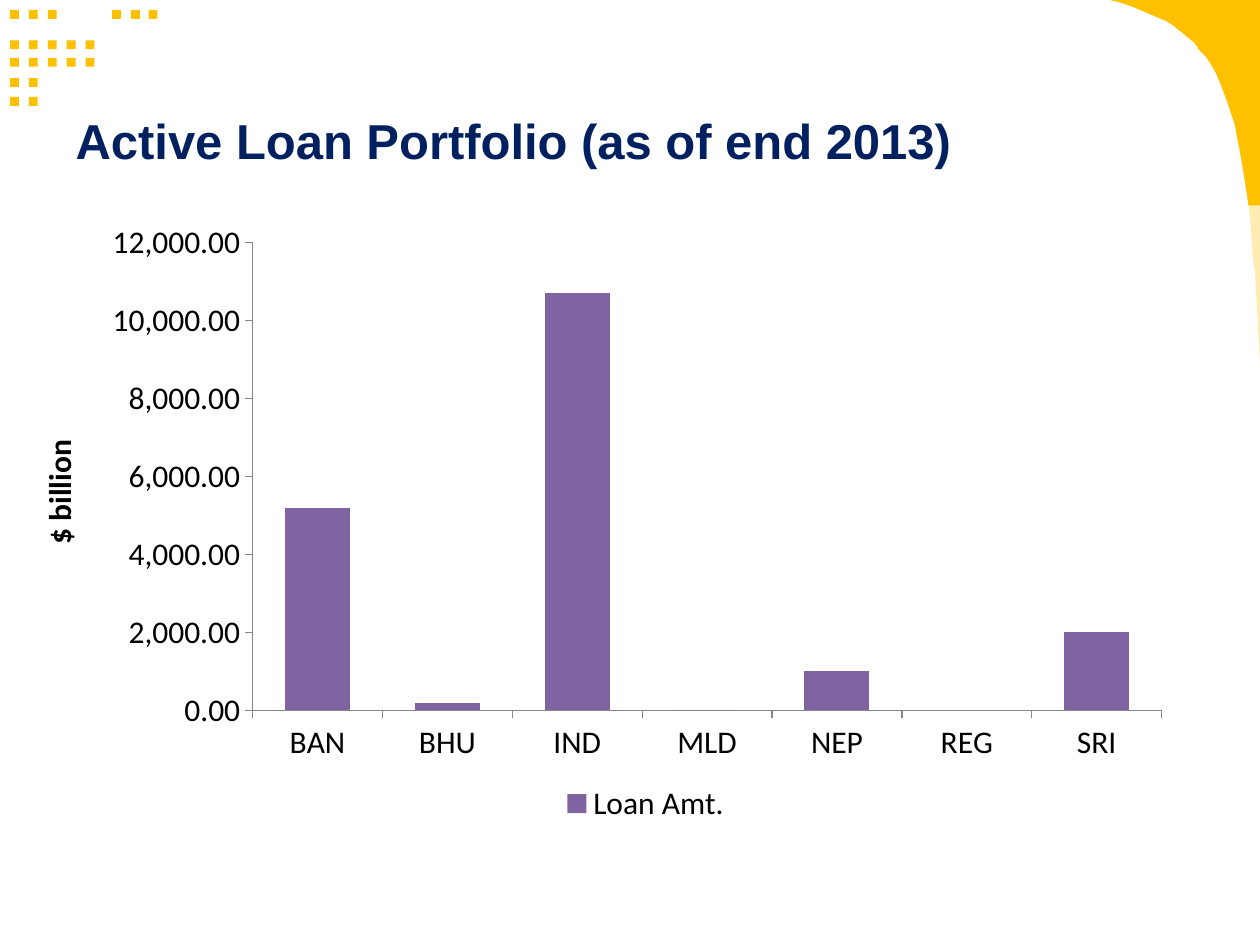
from lxml.etree import fromstring
from pptx import Presentation
from pptx.chart.data import CategoryChartData
from pptx.dml.color import RGBColor
from pptx.enum.chart import XL_CHART_TYPE, XL_LEGEND_POSITION, XL_TICK_MARK
from pptx.enum.shapes import MSO_SHAPE
from pptx.enum.text import MSO_ANCHOR, PP_ALIGN
from pptx.oxml.ns import nsdecls
from pptx.util import Inches, Pt

GOLD, NAVY, PURPLE, GREY, BLACK = "FFC000", "002060", "8064A2", "868686", "000000"

DOT = 0.07
DOT_LEFT, DOT_PITCH = 0.08, 0.15
# Top of each row of dots, and the lefts of its dots
DOT_ROWS = [
    (0.08, [0, 1, 2, 5.4, 6.4, 7.33]),
    (0.32, range(5)),
    (0.46, range(5)),
    (0.62, range(2)),
    (0.77, range(2)),
]
SWOOSH = [
    (8.81, 0), (10, 0), (10, 2.91), (9.99, 2.71), (9.98, 2.52), (9.97, 2.34),
    (9.96, 2.17), (9.94, 2.01), (9.93, 1.85), (9.92, 1.71), (9.9, 1.57),
    (9.88, 1.44), (9.86, 1.32), (9.84, 1.2), (9.82, 1.1), (9.8, 0.99),
    (9.77, 0.9), (9.74, 0.81), (9.71, 0.73), (9.68, 0.65), (9.65, 0.58),
    (9.61, 0.51), (9.57, 0.45), (9.52, 0.4), (9.48, 0.34), (9.43, 0.3),
    (9.37, 0.25), (9.32, 0.21), (9.26, 0.17), (9.19, 0.14), (9.12, 0.11),
    (9.05, 0.08), (8.98, 0.05), (8.89, 0.02),
]
LOANS = {"BAN": 5200, "BHU": 200, "IND": 10700, "MLD": 0,
         "NEP": 1000, "REG": None, "SRI": 2000}


def rgb(color):
    return RGBColor.from_string(color)


def set_font(font, color, **values):
    for name, value in values.items():
        setattr(font, name, value)
    font.color.rgb = rgb(color)


def paint(shape, color):
    shape.shadow.inherit = False
    shape.fill.solid()
    shape.fill.fore_color.rgb = rgb(color)
    shape.line.fill.background()


def add_dots(s):
    for top, columns in DOT_ROWS:
        for column in columns:
            left = DOT_LEFT + column * DOT_PITCH
            dot = s.shapes.add_shape(MSO_SHAPE.RECTANGLE, Inches(left), Inches(top),
                                     Inches(DOT), Inches(DOT))
            paint(dot, GOLD)


def add_swoosh(s):
    points = [(Inches(x), Inches(y)) for x, y in SWOOSH]
    builder = s.shapes.build_freeform(*points[0])
    builder.add_line_segments(points[1:], close=True)
    paint(builder.convert_to_shape(), GOLD)


def add_title(s, text):
    title = s.shapes.title
    title.left, title.top = Inches(0.5), Inches(0.83)
    title.width, title.height = Inches(9.25), Inches(0.75)
    tf = title.text_frame
    tf.vertical_anchor = MSO_ANCHOR.TOP
    p = tf.paragraphs[0]
    p.alignment = PP_ALIGN.LEFT
    r = p.add_run()
    r.text = text
    set_font(r.font, NAVY, name="Arial", size=Pt(28), bold=True)


def place_plot(chart, x, y, w, h):
    """Fix the inner plot area, in shares of the chart's size."""
    area = chart.element.xpath("c:chart/c:plotArea")[0]
    for layout in area.xpath("c:layout"):
        area.remove(layout)
    shares = "".join(f'<c:{tag} val="{value}"/>'
                     for tag, value in zip("xywh", (x, y, w, h)))
    area.insert(0, fromstring(
        f'<c:layout {nsdecls("c")}><c:manualLayout><c:layoutTarget val="inner"/>'
        f'<c:xMode val="edge"/><c:yMode val="edge"/>{shares}'
        '</c:manualLayout></c:layout>'))


def veil_background(chart, opacity):
    """Fill the chart with partly transparent white."""
    chart.element.xpath("c:chart")[0].addnext(fromstring(
        f'<c:spPr {nsdecls("c", "a")}><a:solidFill><a:srgbClr val="FFFFFF">'
        f'<a:alpha val="{opacity * 1000}"/></a:srgbClr></a:solidFill>'
        '<a:ln><a:noFill/></a:ln></c:spPr>'))


def format_axes(chart):
    for axis in (chart.category_axis, chart.value_axis):
        axis.has_major_gridlines = False
        axis.major_tick_mark = XL_TICK_MARK.OUTSIDE
        axis.minor_tick_mark = XL_TICK_MARK.NONE
        axis.format.line.color.rgb = rgb(GREY)
        axis.format.line.width = Pt(0.75)
    axis = chart.value_axis
    axis.minimum_scale, axis.maximum_scale, axis.major_unit = 0, 12000, 2000
    axis.tick_labels.number_format = "#,##0.00"
    axis.tick_labels.number_format_is_linked = False
    tf = axis.axis_title.text_frame
    tf.text = "$ billion"
    set_font(tf.paragraphs[0].runs[0].font, BLACK,
             name="Calibri", size=Pt(18), bold=True)


def add_loan_chart(s):
    data = CategoryChartData(number_format="#,##0.00")
    data.categories = list(LOANS)
    data.add_series("Loan Amt.", list(LOANS.values()))
    chart = s.shapes.add_chart(XL_CHART_TYPE.COLUMN_STACKED, Inches(0.25), Inches(1.63),
                               Inches(9.75), Inches(4.95), data).chart
    set_font(chart.font, BLACK, name="Calibri", size=Pt(18))
    chart.has_title = False
    chart.has_legend = True
    chart.legend.position = XL_LEGEND_POSITION.BOTTOM
    chart.legend.include_in_layout = False
    plot = chart.plots[0]
    plot.gap_width, plot.overlap, plot.vary_by_categories = 100, 100, False
    fill = plot.series[0].format.fill
    fill.solid()
    fill.fore_color.rgb = rgb(PURPLE)
    format_axes(chart)
    place_plot(chart, 0.18, 0.06, 0.74, 0.75)
    veil_background(chart, 70)


def main():
    prs = Presentation()
    prs.slide_width, prs.slide_height = Inches(10), Inches(7.5)
    s = prs.slides.add_slide(prs.slide_layouts[5])
    add_dots(s)
    add_swoosh(s)
    add_title(s, "Active Loan Portfolio (as of end 2013)")
    add_loan_chart(s)
    prs.save("out.pptx")


if __name__ == "__main__":
    main()
